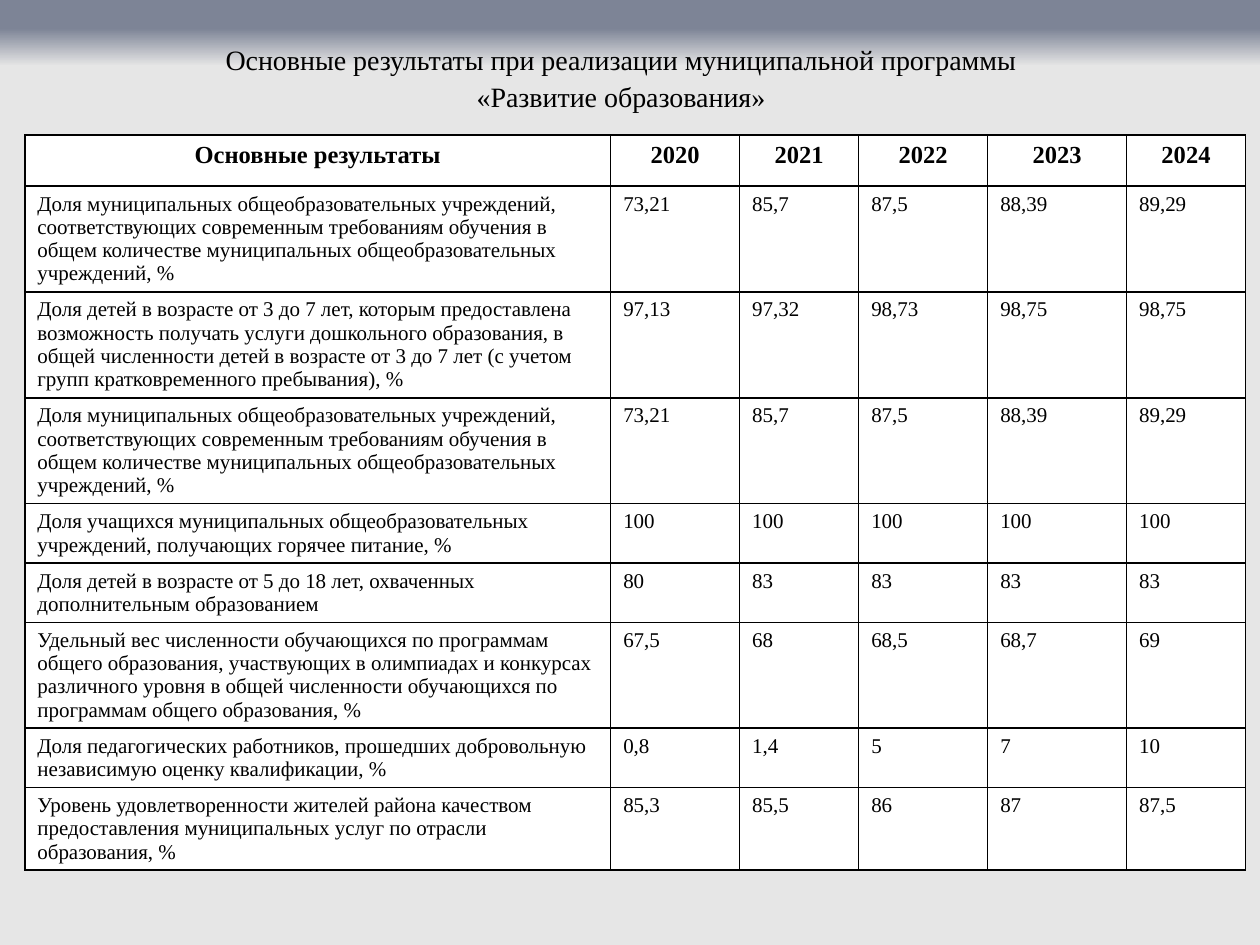
from dataclasses import dataclass
from lxml import etree
from pptx import Presentation
from pptx import util as u
from pptx.dml.color import RGBColor
from pptx.enum import text as t
from pptx.oxml import ns


@dataclass(frozen=True)
class Theme:
    font: str = "Times New Roman"
    ink: str = "000000"
    paper: str = "FFFFFF"
    band: str = "7D8496"
    ground: str = "E6E6E6"
    title: int = 16
    head: int = 14
    body: int = 12
    rule: int = 1


THEME = Theme()
TITLE = "Основные результаты при реализации муниципальной программы\v«Развитие образования»"
HEAD = ("Основные результаты", "2020", "2021", "2022", "2023", "2024")
SCHOOLS = ("Доля муниципальных общеобразовательных учреждений, соответствующих "
           "современным требованиям обучения в общем количестве муниципальных "
           "общеобразовательных учреждений, %",
           "73,21", "85,7", "87,5", "88,39", "89,29")
ROWS = (
    SCHOOLS,
    ("Доля детей в возрасте от 3 до 7 лет, которым предоставлена возможность "
     "получать услуги дошкольного образования, в общей численности детей в "
     "возрасте от 3 до 7 лет (с учетом групп кратковременного пребывания), %",
     "97,13", "97,32", "98,73", "98,75", "98,75"),
    SCHOOLS,
    ("Доля учащихся муниципальных общеобразовательных учреждений, "
     "получающих горячее питание, %", *["100"] * 5),
    ("Доля детей в возрасте от 5 до 18 лет, охваченных дополнительным "
     "образованием", "80", *["83"] * 4),
    ("Удельный вес численности обучающихся по программам общего образования, "
     "участвующих в олимпиадах и конкурсах различного уровня в общей "
     "численности обучающихся по программам общего образования, %",
     "67,5", "68", "68,5", "68,7", "69"),
    ("Доля педагогических работников, прошедших добровольную независимую "
     "оценку квалификации, %", "0,8", "1,4", "5", "7", "10"),
    ("Уровень удовлетворенности жителей района качеством предоставления "
     "муниципальных услуг по отрасли образования, %",
     "85,3", "85,5", "86", "87", "87,5"),
)
WIDTHS = (11.81, 2.6, 2.4, 2.6, 2.8, 2.4)
ROW = 1.03


def style(par, size, bold=False, align=t.PP_ALIGN.LEFT):
    par.alignment = align
    font = par.font
    font.name, font.size, font.bold = THEME.font, u.Pt(size), bold
    font.color.rgb = RGBColor.from_string(THEME.ink)


def add_tint(parent, color):
    fill = etree.SubElement(parent, ns.qn("a:solidFill"))
    etree.SubElement(fill, ns.qn("a:srgbClr"), val=color)


def set_ground(slide):
    fill = slide.background.fill
    fill.gradient()
    fill.gradient_angle = 270
    stops = next(slide.element.iter(ns.qn("a:gsLst")))
    for old in list(stops):
        stops.remove(old)
    for pos, color in ((0, THEME.band), (3, THEME.band),
                       (7, THEME.ground), (100, THEME.ground)):
        stop = etree.SubElement(stops, ns.qn("a:gs"), pos=str(pos * 1000))
        etree.SubElement(stop, ns.qn("a:srgbClr"), val=color)


def add_title(slide, left, top, width, height):
    title = slide.shapes.title
    title.left, title.top, title.width, title.height = left, top, width, height
    frame = title.text_frame
    frame.text = TITLE
    frame.word_wrap = True
    frame.auto_size = t.MSO_AUTO_SIZE.NONE
    frame.vertical_anchor = t.MSO_ANCHOR.MIDDLE
    par = frame.paragraphs[0]
    par.line_spacing = 1.1
    style(par, THEME.title, align=t.PP_ALIGN.CENTER)


def set_edges(cell):
    props = cell._tc.get_or_add_tcPr()
    for spot, side in enumerate(("lnL", "lnR", "lnT", "lnB")):
        line = etree.Element(ns.qn(f"a:{side}"), w=str(u.Pt(THEME.rule)))
        add_tint(line, THEME.ink)
        props.insert(spot, line)


def fill_cell(cell, words, head):
    cell.text = words
    cell.fill.solid()
    cell.fill.fore_color.rgb = RGBColor.from_string(THEME.paper)
    set_edges(cell)
    par = cell.text_frame.paragraphs[0]
    if head:
        style(par, THEME.head, True, t.PP_ALIGN.CENTER)
    else:
        style(par, THEME.body)


def add_results(slide, left, top):
    data = (HEAD, *ROWS)
    table = slide.shapes.add_table(
        len(data), len(HEAD), left, top,
        u.Cm(sum(WIDTHS)), u.Cm(ROW * len(data))).table
    table.first_row = table.horz_banding = False
    for col, width in zip(table.columns, WIDTHS):
        col.width = u.Cm(width)
    for r, row in enumerate(data):
        table.rows[r].height = u.Cm(ROW)
        for c, words in enumerate(row):
            fill_cell(table.cell(r, c), words, r == 0)


def main():
    deck = Presentation()
    deck.slide_width, deck.slide_height = u.Cm(25.4), u.Cm(19.05)
    slide = deck.slides.add_slide(deck.slide_layouts[5])
    set_ground(slide)
    add_title(slide, u.Cm(0.9), u.Cm(0.76), u.Cm(23.24), u.Cm(1.55))
    add_results(slide, u.Cm(0.5), u.Cm(2.72))
    deck.save("out.pptx")


if __name__ == "__main__":
    main()
